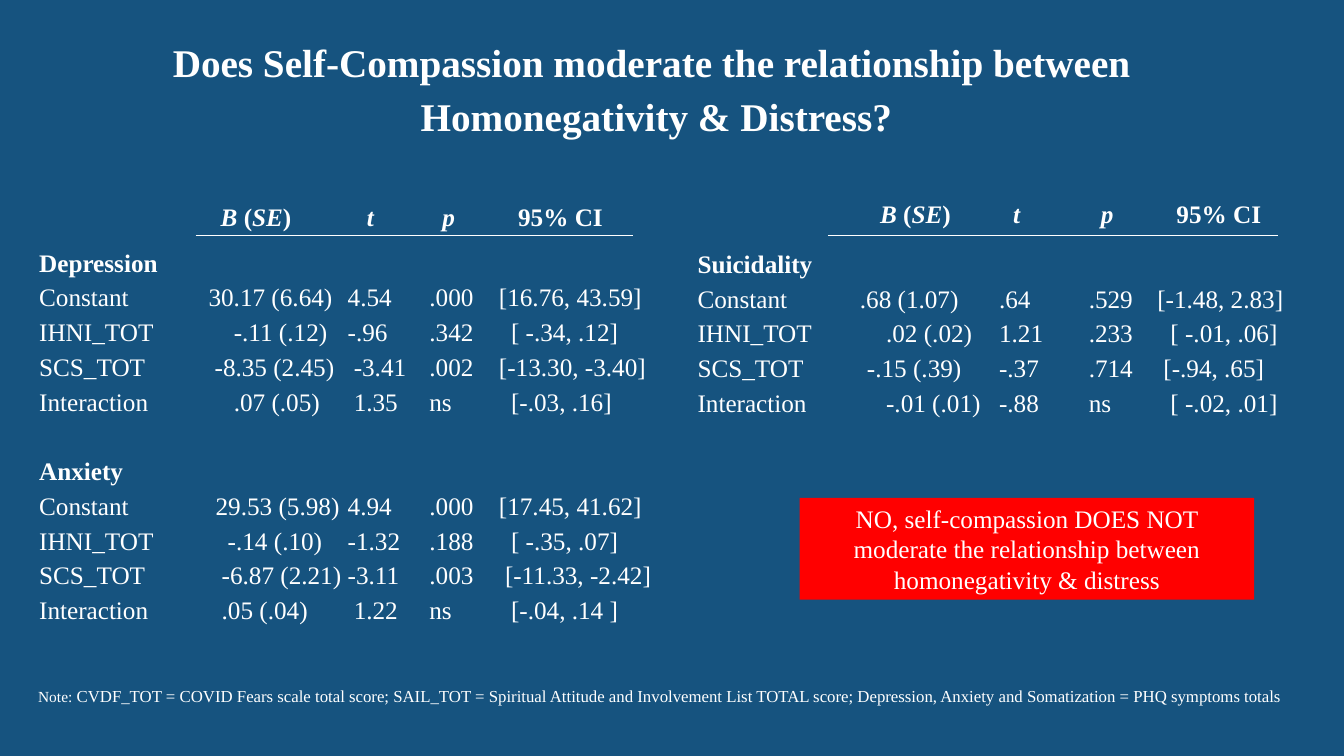
"""Build a slide of moderation results for self-compassion."""
from lxml import etree
from pptx import Presentation
from pptx.dml.color import RGBColor
from pptx.enum import shapes, text
from pptx.oxml import ns
from pptx.util import Inches, Pt

BLUE = RGBColor(0x16, 0x53, 0x7F)
RED = RGBColor(0xFF, 0x00, 0x00)
WHITE = RGBColor(0xFF, 0xFF, 0xFF)
HEAD = ["\t", "B ", "(", "SE", ")\t", "t\tp", "\t95% CI"]
LEFT = [
    ("Depression", 8, []),
    ("Constant\t30.17 (6.64)\t4.54\t.000\t[16.76, 43.59]", 0, [1.68, 3.06, 3.87, 4.56]),
    ("IHNI_TOT\t-.11 (.12)\t-.96\t.342\t[ -.34, .12]", 0, [1.93, 3.06, 3.87, 4.68]),
    ("SCS_TOT\t-8.35 (2.45)\t-3.41\t.002\t[-13.30, -3.40]", 0, [1.74, 3.12, 3.87, 4.56]),
    ("Interaction\t.07 (.05)\t1.35\tns\t[-.03, .16]", 0, [1.93, 3.12, 3.87, 4.68]),
    ("Anxiety", 24.7, []),
    ("Constant\t29.53 (5.98)\t4.94\t.000\t[17.45, 41.62]", 0, [1.75, 3.06, 3.87, 4.56]),
    ("IHNI_TOT\t-.14 (.10)\t-1.32\t.188\t[ -.35, .07]", 0, [1.87, 3.06, 3.87, 4.68]),
    ("SCS_TOT\t-6.87 (2.21)\t-3.11\t.003\t[-11.33, -2.42]", 0, [1.81, 3.06, 3.87, 4.62]),
    ("Interaction\t.05 (.04)\t1.22\tns\t[-.04, .14 ]", 0, [1.81, 3.12, 3.87, 4.68]),
]
RIGHT = [
    ("Suicidality", 11, []),
    ("Constant\t.68 (1.07)\t.64\t.529\t[-1.48, 2.83]", 0, [1.61, 2.99, 3.88, 4.56]),
    ("IHNI_TOT\t.02 (.02)\t1.21\t.233\t[ -.01, .06]", 0, [1.87, 2.99, 3.88, 4.69]),
    ("SCS_TOT\t-.15 (.39)\t-.37\t.714\t[-.94, .65]", 0, [1.68, 2.99, 3.88, 4.62]),
    ("Interaction\t-.01 (.01)\t-.88\tns\t[ -.02, .01]", 0, [1.87, 2.99, 3.88, 4.69]),
]


def style(para, size, bold=False, line=1.15, gap=0, stops=()):
    """Set tabs, spacing and font of a paragraph."""
    if stops:
        tabs = etree.SubElement(para._p.get_or_add_pPr(), ns.qn("a:tabLst"))
        for stop in stops:
            etree.SubElement(tabs, ns.qn("a:tab"), pos=str(Inches(stop)), algn="l")
    para.line_spacing = line
    para.space_before = Pt(gap)
    font = para.font
    font.name, font.size, font.bold = "Times New Roman", Pt(size), bold
    font.color.rgb = WHITE


def place(shape, *box):
    """Position a shape and return its wrapped text frame."""
    shape.left, shape.top, shape.width, shape.height = map(Inches, box)
    frame = shape.text_frame
    frame.word_wrap = True
    frame.auto_size = text.MSO_AUTO_SIZE.SHAPE_TO_FIT_TEXT
    return frame


deck = Presentation()
deck.slide_width, deck.slide_height = Inches(13.33), Inches(7.5)
slide = deck.slides.add_slide(deck.slide_layouts[5])
slide.background.fill.solid()
slide.background.fill.fore_color.rgb = BLUE

title = place(slide.shapes.title, 0.53, 0.26, 12.46, 1.15)
title.vertical_anchor = text.MSO_ANCHOR.TOP
title.margin_right = Inches(0.6)
title.text = ("Does Self-Compassion moderate the relationship between \v"
              "Homonegativity & Distress?")
style(title.paragraphs[0], 28, True)
title.paragraphs[0].alignment = text.PP_ALIGN.CENTER

for box, heads, rows, rule in [
    ((0.29, 1.56, 6.41, 4.67), [1.8, 3.25, 4, 4.75], LEFT, (1.94, 6.28)),
    ((6.82, 1.53, 6.18, 2.98), [1.81, 3.13, 4, 4.75], RIGHT, (8.21, 12.68)),
]:
    frame = place(slide.shapes.add_textbox(0, 0, 0, 0), *box)
    frame.margin_top = Inches(0.39)
    head = frame.paragraphs[0]
    style(head, 18, True, stops=heads)
    for i, part in enumerate(HEAD):
        run = head.add_run()
        run.text = part
        run.font.italic = i % 2 == 1
    for words, gap, stops in rows:
        para = frame.add_paragraph()
        para.text = words
        style(para, 18, not stops, gap=gap, stops=stops)
    start, end = map(Inches, rule)
    line = slide.shapes.add_connector(
        shapes.MSO_CONNECTOR.STRAIGHT, start, Inches(2.34), end, Inches(2.34))
    line.line.color.rgb = WHITE
    line.line.width = Pt(0.5)
    etree.SubElement(line._element.spPr, ns.qn("a:effectLst"))

note = place(slide.shapes.add_textbox(0, 0, 0, 0), 0.28, 6.72, 12.77, 0.32).paragraphs[0]
style(note, 12, gap=6)
label = note.add_run()
label.text = "Note:"
label.font.size = Pt(11)
note.add_run().text = (
    " CVDF_TOT = COVID Fears scale total score; SAIL_TOT = Spiritual Attitude and "
    "Involvement List TOTAL score; Depression, Anxiety and Somatization = PHQ symptoms totals")

answer = slide.shapes.add_shape(shapes.MSO_SHAPE.RECTANGLE, 0, 0, 0, 0)
answer.shadow.inherit = False
answer.fill.solid()
answer.fill.fore_color.rgb = RED
answer.line.fill.background()
frame = place(answer, 7.93, 4.94, 4.51, 1.01)
frame.text = ("NO, self-compassion DOES NOT moderate the relationship between "
              "homonegativity & distress")
style(frame.paragraphs[0], 18, line=1)
frame.paragraphs[0].alignment = text.PP_ALIGN.CENTER

deck.save("out.pptx")
